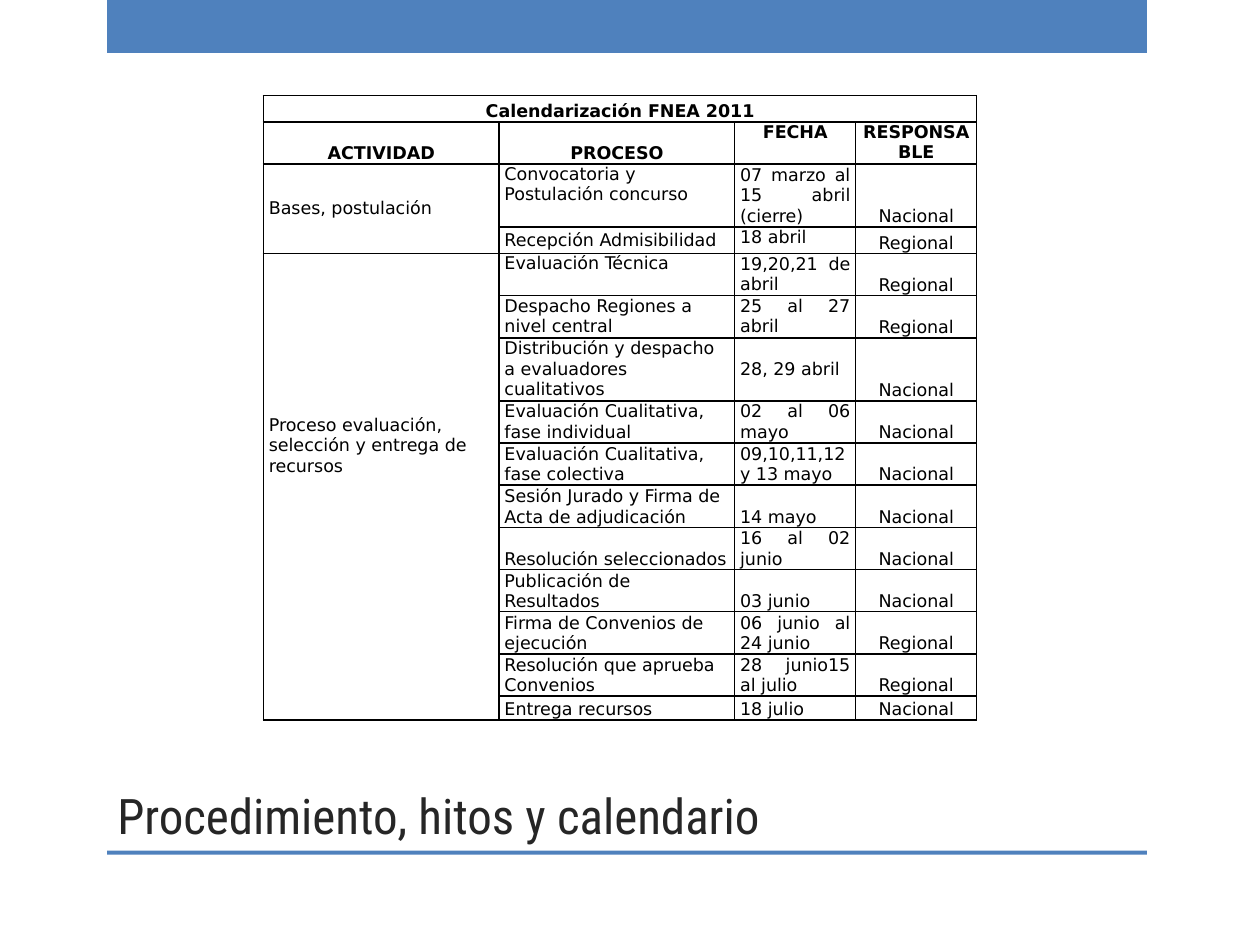
from lxml import etree
from pptx import Presentation
from pptx import util as u
from pptx.dml.color import RGBColor
from pptx.enum import shapes, text
from pptx.oxml import ns

BLUE = RGBColor(0x4F, 0x81, 0xBD)
BLACK = RGBColor(0, 0, 0)
DARK = RGBColor(0x26, 0x26, 0x26)

TOP, MIDDLE, BOTTOM = (text.MSO_ANCHOR.TOP, text.MSO_ANCHOR.MIDDLE,
                       text.MSO_ANCHOR.BOTTOM)
LEFT, CENTER, JUSTIFY = (text.PP_ALIGN.LEFT, text.PP_ALIGN.CENTER,
                         text.PP_ALIGN.JUSTIFY)

TITLE = "Procedimiento, hitos y calendario"
TABLE_TITLE = "Calendarización FNEA 2011"
HEADERS = [("ACTIVIDAD", BOTTOM), ("PROCESO", BOTTOM),
           ("FECHA", TOP), ("RESPONSABLE", TOP)]
ACTIVITIES = [
    ("Bases, postulación", 2, 0),
    ("Proceso evaluación, selección y entrega de recursos", 11, 1.65),
]
STEPS = [
    ("Convocatoria y Postulación concurso", TOP,
     "07 marzo al 15 abril (cierre)", MIDDLE, "Nacional"),
    ("Recepción Admisibilidad", MIDDLE, "18 abril", TOP, "Regional"),
    ("Evaluación Técnica", TOP, "19,20,21 de abril", MIDDLE, "Regional"),
    ("Despacho Regiones a nivel central", MIDDLE,
     "25 al 27 abril", MIDDLE, "Regional"),
    ("Distribución y despacho a evaluadores cualitativos", MIDDLE,
     "28, 29 abril", MIDDLE, "Nacional"),
    ("Evaluación Cualitativa, fase individual", MIDDLE,
     "02 al 06 mayo", MIDDLE, "Nacional"),
    ("Evaluación Cualitativa, fase colectiva", BOTTOM,
     "09,10,11,12 y 13 mayo", BOTTOM, "Nacional"),
    ("Sesión Jurado y Firma de Acta de adjudicación", BOTTOM,
     "14 mayo", BOTTOM, "Nacional"),
    ("Resolución seleccionados", BOTTOM, "16 al 02 junio", BOTTOM, "Nacional"),
    ("Publicación de Resultados", BOTTOM, "03 junio", BOTTOM, "Nacional"),
    ("Firma de Convenios de ejecución", BOTTOM,
     "06 junio al 24 junio", BOTTOM, "Regional"),
    ("Resolución que aprueba Convenios", BOTTOM,
     "28 junio15 al julio", BOTTOM, "Regional"),
    ("Entrega recursos", BOTTOM, "18 julio", BOTTOM, "Nacional"),
]
COLUMN_WIDTHS = [4.75, 4.75, 2.44, 2.44]
ROW_HEIGHTS = [0.53, 0.85, 1.27, 0.53, 0.85, 0.85, 1.27] + [0.85] * 7 + [0.48]
BARS = [(0, 1.07), (17.15, 0.08)]


def add_bar(page, top, height):
    bar = page.shapes.add_shape(shapes.MSO_SHAPE.RECTANGLE, u.Cm(2.16),
                                u.Cm(top), u.Cm(20.96), u.Cm(height))
    bar.shadow.inherit = False
    bar.fill.solid()
    bar.fill.fore_color.rgb = BLUE
    bar.line.fill.background()


def format_cell(cell):
    cell.margin_left = cell.margin_right = u.Cm(0.11)
    cell.margin_top = cell.margin_bottom = 0
    properties = cell._tc.get_or_add_tcPr()
    for side in ("a:lnL", "a:lnR", "a:lnT", "a:lnB"):
        line = etree.SubElement(properties, ns.qn(side), w=str(u.Pt(1)))
        fill = etree.SubElement(line, ns.qn("a:solidFill"))
        etree.SubElement(fill, ns.qn("a:srgbClr"), val=str(BLACK))
    cell.fill.background()


def write_cell(cell, content, anchor, align, bold=False):
    cell.vertical_anchor = anchor
    para = cell.text_frame.paragraphs[0]
    para.text = content
    para.alignment = align
    para.font.name = "DejaVu Sans"
    para.font.size = u.Pt(10)
    para.font.bold = bold
    para.font.color.rgb = BLACK


def add_calendar(page):
    table = page.shapes.add_table(
        len(ROW_HEIGHTS), len(COLUMN_WIDTHS), u.Cm(5.31), u.Cm(1.93),
        u.Cm(sum(COLUMN_WIDTHS)), u.Cm(sum(ROW_HEIGHTS))).table
    table.first_row = table.horz_banding = False
    for column, width in zip(table.columns, COLUMN_WIDTHS):
        column.width = u.Cm(width)
    for row, height in zip(table.rows, ROW_HEIGHTS):
        row.height = u.Cm(height)
    for cell in table.iter_cells():
        format_cell(cell)
        cell.text_frame.paragraphs[0].font.size = u.Pt(10)

    table.cell(0, 0).merge(table.cell(0, 3))
    write_cell(table.cell(0, 0), TABLE_TITLE, BOTTOM, CENTER, True)
    for index, (label, anchor) in enumerate(HEADERS):
        write_cell(table.cell(1, index), label, anchor, CENTER, True)

    first = 2
    for activity, count, bottom in ACTIVITIES:
        cell = table.cell(first, 0)
        cell.merge(table.cell(first + count - 1, 0))
        cell.margin_bottom = u.Cm(bottom)
        write_cell(cell, activity, MIDDLE, LEFT)
        first += count

    for index, step in enumerate(STEPS, start=2):
        process, process_anchor, date, date_anchor, owner = step
        write_cell(table.cell(index, 1), process, process_anchor, LEFT)
        write_cell(table.cell(index, 2), date, date_anchor, JUSTIFY)
        write_cell(table.cell(index, 3), owner, BOTTOM, CENTER)


def add_title(page):
    title = page.shapes.title
    title.left, title.top = u.Cm(2.11), u.Cm(12.7)
    title.width, title.height = u.Cm(18.85), u.Cm(4.45)
    title.text_frame.vertical_anchor = BOTTOM
    para = title.text_frame.paragraphs[0]
    para.text = TITLE
    para.alignment = LEFT
    para.font.name = "Roboto Condensed"
    para.font.size = u.Pt(28)
    para.font.color.rgb = DARK


def main():
    deck = Presentation()
    deck.slide_width, deck.slide_height = u.Cm(25.4), u.Cm(19.05)
    page = deck.slides.add_slide(deck.slide_layouts[5])
    for top, height in BARS:
        add_bar(page, top, height)
    add_title(page)
    add_calendar(page)
    deck.save("out.pptx")


if __name__ == "__main__":
    main()
